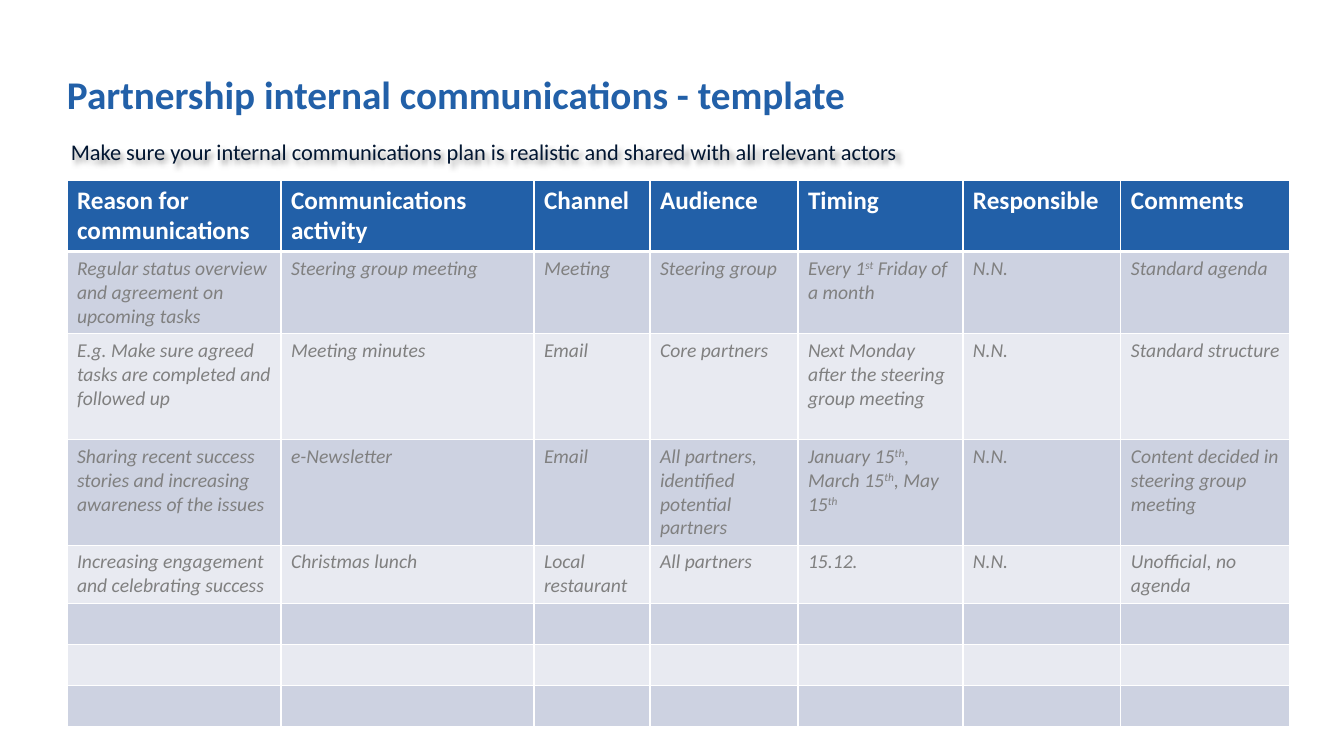
from dataclasses import dataclass
from typing import Any

from pptx import Presentation
from pptx import oxml
from pptx.dml import color
from pptx.enum import text
from pptx.oxml import ns
from pptx.util import Emu, Pt

SCALE = 12192000 / 1344
BLUE = color.RGBColor(0x22, 0x60, 0xA8)
NAVY = color.RGBColor(0x02, 0x16, 0x31)
WHITE = color.RGBColor(0xFF, 0xFF, 0xFF)
GREY = color.RGBColor(0x80, 0x80, 0x80)
DARK = color.RGBColor(0xCD, 0xD2, 0xE1)
LIGHT = color.RGBColor(0xE8, 0xEA, 0xF1)

HEAD = {"size": Pt(18), "bold": True, "italic": False}
BODY = {"size": Pt(14), "bold": False, "italic": True}

WIDTHS = [214, 253, 116, 148, 165, 158, 169]
HEIGHTS = [71, 82, 106, 105, 58, 41, 41, 41]
ROWS = [
    ["Reason for communications", "Communications activity", "Channel",
     "Audience", "Timing", "Responsible", "Comments"],
    ["Regular status overview and agreement on upcoming tasks",
     "Steering group meeting", "Meeting", "Steering group",
     "Every 1^st^ Friday of a month", "N.N.", "Standard agenda"],
    ["E.g. Make sure agreed tasks are completed and followed up",
     "Meeting minutes", "Email", "Core partners",
     "Next Monday after the steering group meeting", "N.N.",
     "Standard structure"],
    ["Sharing recent success stories and increasing awareness of the issues",
     "e-Newsletter", "Email", "All partners, identified potential partners",
     "January 15^th^, March 15^th^, May 15^th^", "N.N.",
     "Content decided in steering group meeting"],
    ["Increasing engagement and celebrating success", "Christmas lunch",
     "Local restaurant", "All partners", "15.12.", "N.N.",
     "Unofficial, no agenda"],
]


@dataclass
class Label:
    words: str
    left: int
    top: int
    width: int
    height: int
    tint: color.RGBColor
    font: dict[str, Any]
    frame: dict[str, Any]
    shadow: bool = False


LABELS = [
    Label("Partnership internal communications - template",
          67, 21, 1034, 101, BLUE, {"size": Pt(28), "bold": True},
          {"vertical_anchor": text.MSO_ANCHOR.BOTTOM, "margin_left": 0}),
    Label("Make sure your internal communications plan is realistic "
          "and shared with all relevant actors",
          61, 130, 1204, 43, NAVY, {"size": Pt(16)},
          {"vertical_anchor": text.MSO_ANCHOR.MIDDLE}, True),
]


def px(size: int) -> Emu:
    return Emu(round(size * SCALE))


def apply(item: Any, form: dict[str, Any]) -> None:
    for key, value in form.items():
        setattr(item, key, value)


def write(par: Any, words: str, tint: color.RGBColor,
          form: dict[str, Any]) -> None:
    for index, part in enumerate(words.split("^")):
        if not part:
            continue
        run = par.add_run()
        run.text = part
        apply(run.font, {"name": "Calibri", **form})
        run.font.color.rgb = tint
        if index % 2:
            run._r.get_or_add_rPr().set("baseline", "30000")


def shade(shape: Any) -> None:
    shape._element.spPr.append(oxml.parse_xml(
        f'<a:effectLst {ns.nsdecls("a")}>'
        '<a:outerShdw blurRad="50800" dist="38100" dir="2700000" algn="tl">'
        '<a:srgbClr val="000000"><a:alpha val="40000"/></a:srgbClr>'
        '</a:outerShdw></a:effectLst>'))


def label(slide: Any, item: Label) -> None:
    box = slide.shapes.add_textbox(
        *map(px, (item.left, item.top, item.width, item.height)))
    apply(box.text_frame, {"word_wrap": True, **item.frame})
    write(box.text_frame.paragraphs[0], item.words, item.tint, item.font)
    if item.shadow:
        shade(box)


def border(cell: Any, row: int) -> None:
    sides = {"L": 1, "R": 1, "T": 3 if row == 1 else 1,
             "B": 3 if row == 0 else 1}
    for side, width in sides.items():
        cell._tc.get_or_add_tcPr().append(oxml.parse_xml(
            f'<a:ln{side} {ns.nsdecls("a")} w="{Pt(width)}">'
            f'<a:solidFill><a:srgbClr val="{WHITE}"/></a:solidFill>'
            f'</a:ln{side}>'))


def grid(slide: Any) -> None:
    table = slide.shapes.add_table(
        len(HEIGHTS), len(WIDTHS), px(67), px(180),
        px(sum(WIDTHS)), px(sum(HEIGHTS))).table
    for column, width in zip(table.columns, WIDTHS):
        column.width = px(width)
    for index, (row, height) in enumerate(zip(table.rows, HEIGHTS)):
        row.height = px(height)
        fill = BLUE if index == 0 else DARK if index % 2 else LIGHT
        tint, form = (WHITE, HEAD) if index == 0 else (GREY, BODY)
        for spot, cell in enumerate(row.cells):
            border(cell, index)
            cell.fill.solid()
            cell.fill.fore_color.rgb = fill
            if index < len(ROWS):
                write(cell.text_frame.paragraphs[0], ROWS[index][spot],
                      tint, form)


def main() -> None:
    deck = Presentation()
    apply(deck, {"slide_width": px(1344), "slide_height": px(756)})
    slide = deck.slides.add_slide(deck.slide_layouts[6])
    grid(slide)
    for item in LABELS:
        label(slide, item)
    deck.save("out.pptx")


if __name__ == "__main__":
    main()
